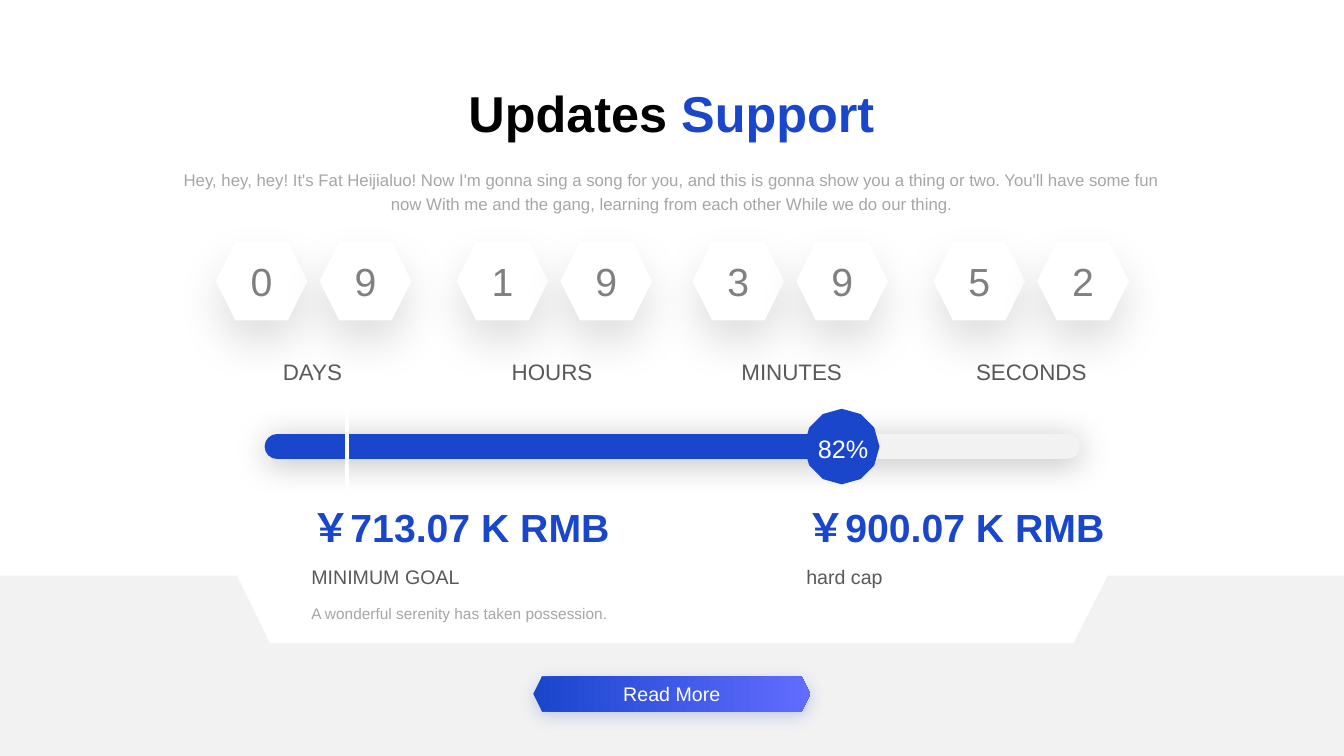
from dataclasses import dataclass
from typing import Optional

from lxml.etree import SubElement
from pptx import Presentation
from pptx.dml.color import RGBColor
from pptx.dml.fill import FillFormat
from pptx.enum.shapes import MSO_CONNECTOR as Link, MSO_SHAPE as Preset
from pptx.enum.text import MSO_ANCHOR as Anchor, MSO_AUTO_SIZE as AutoSize, PP_ALIGN as Align
from pptx.oxml.ns import qn
from pptx.shapes.autoshape import Shape
from pptx.shapes.connector import Connector
from pptx.text.text import _Paragraph as Paragraph
from pptx.util import Inches, Length, Pt

WHITE = RGBColor(0xFF, 0xFF, 0xFF)
BLACK = RGBColor(0x00, 0x00, 0x00)
PALE = RGBColor(0xF2, 0xF2, 0xF2)
SILVER = RGBColor(0xA6, 0xA6, 0xA6)
GREY = RGBColor(0x80, 0x80, 0x80)
SLATE = RGBColor(0x59, 0x59, 0x59)
BLUE = RGBColor(0x1A, 0x46, 0xCC)
VIOLET = RGBColor(0x62, 0x6C, 0xFF)

# The slide is a grid of square cells, ten to the inch.
COLUMNS, ROWS = 133.33, 75


def cells(count: float) -> Length:
    return Inches(count / 10)


@dataclass(frozen=True)
class Box:
    column: float
    row: float
    columns: float
    rows: float

    def lengths(self) -> list[Length]:
        return [cells(n) for n in (self.column, self.row, self.columns, self.rows)]


@dataclass(frozen=True)
class Style:
    """A run's look; with an angle, the text fades from blue to violet."""
    size: int
    color: RGBColor = BLUE
    bold: bool = False
    angle: Optional[int] = None


@dataclass(frozen=True)
class Shadow:
    color: RGBColor
    opacity: int
    blur: int
    distance: int


@dataclass(frozen=True)
class Countdown:
    digits: str
    unit: str
    column: float


@dataclass(frozen=True)
class Goal:
    amount: str
    name: str
    column: float
    amount_columns: float
    name_columns: float
    note: str = ""


TITLE = Style(36, BLACK, bold=True)
TITLE_ACCENT = Style(36, bold=True, angle=315)
INTRO = Style(12, SILVER)
DIGIT = Style(28, GREY)
UNIT = Style(16, SLATE)
AMOUNT = Style(28, bold=True, angle=0)
GOAL_NAME = Style(14, SLATE)
NOTE = Style(11, SILVER)
PERCENT = Style(18, WHITE)
BUTTON = Style(14, WHITE)

TRACK_SHADOW = Shadow(BLACK, 25, 24, 3)
DIGIT_SHADOW = Shadow(BLACK, 13, 32, 15)
BUTTON_SHADOW = Shadow(BLUE, 22, 12, 3)

COUNTDOWNS = [
    Countdown("09", "DAYS", 21.4),
    Countdown("19", "HOURS", 45.3),
    Countdown("39", "MINUTES", 68.7),
    Countdown("52", "SECONDS", 92.6),
]
DIGIT_STEP = 10.3
UNIT_LEFT, UNIT_STEP = 20.6, 23.77
GOALS = [
    Goal("￥713.07 K RMB", "MINIMUM GOAL", 29.9, 38.8, 20.8,
         "A wonderful serenity has taken possession."),
    Goal("￥900.07 K RMB", "hard cap", 79, 36.4, 24.2),
]
BAR_LEFT, BAR_RIGHT, BAR_REACHED, BAR_ROW = 27.5, 105.9, 83.5, 44.3
FLOOR_TOP, NOTCH_ROW = 57.1, 63.8
INTRO_TEXT = (
    "Hey, hey, hey! It's Fat Heijialuo! Now I'm gonna sing a song for you, and this is gonna "
    "show you a thing or two. You'll have some fun now With me and the gang, learning from "
    "each other While we do our thing."
)


def fade(fill: FillFormat, angle: int) -> None:
    fill.gradient()
    fill.gradient_angle = angle
    for stop, color in zip(fill.gradient_stops, (BLUE, VIOLET)):
        stop.color.rgb = color


def add_run(paragraph: Paragraph, text: str, style: Style) -> None:
    run = paragraph.add_run()
    run.text = text
    font = run.font
    font.name, font.size, font.bold = "Arial", Pt(style.size), style.bold
    if style.angle is None:
        font.color.rgb = style.color
    else:
        fade(font.fill, style.angle)


def add_text(shapes, box: Box, runs: list[tuple[str, Style]], align: Align = Align.CENTER,
             spacing: float = 1.0, wrap: bool = True) -> None:
    frame = shapes.add_textbox(*box.lengths()).text_frame
    frame.word_wrap = wrap
    frame.auto_size = AutoSize.SHAPE_TO_FIT_TEXT
    paragraph = frame.paragraphs[0]
    paragraph.alignment = align
    paragraph.line_spacing = spacing
    for text, style in runs:
        add_run(paragraph, text, style)


def cast_shadow(effects, shadow: Shadow) -> None:
    outer = SubElement(effects, qn("a:outerShdw"), blurRad=str(Pt(shadow.blur)),
                       dist=str(Pt(shadow.distance)), dir="5400000", algn="t", rotWithShape="0")
    color = SubElement(outer, qn("a:srgbClr"), val=str(shadow.color))
    SubElement(color, qn("a:alpha"), val=str(shadow.opacity * 1000))


def add_hexagon(shapes, box: Box, text: str, style: Style, shadow: Shadow) -> Shape:
    hexagon = shapes.add_shape(Preset.HEXAGON, *box.lengths())
    hexagon.line.fill.background()
    hexagon.shadow.inherit = False
    cast_shadow(hexagon.element.spPr.find(qn("a:effectLst")), shadow)
    frame = hexagon.text_frame
    frame.vertical_anchor = Anchor.MIDDLE
    frame.paragraphs[0].alignment = Align.CENTER
    add_run(frame.paragraphs[0], text, style)
    return hexagon


def add_line(shapes, start: tuple[float, float], end: tuple[float, float], color: RGBColor,
             width: int, shadow: Optional[Shadow] = None) -> Connector:
    line = shapes.add_connector(Link.STRAIGHT, *map(cells, start + end))
    line.line.color.rgb = color
    line.line.width = Pt(width)
    effects = SubElement(line.element.spPr, qn("a:effectLst"))
    if shadow:
        cast_shadow(effects, shadow)
    return line


def add_bar(shapes, right: float, color: RGBColor, shadow: Optional[Shadow] = None) -> Connector:
    bar = add_line(shapes, (BAR_LEFT, BAR_ROW), (right, BAR_ROW), color, 18, shadow)
    bar.element.spPr.find(qn("a:ln")).set("cap", "rnd")
    return bar


def add_floor(shapes) -> None:
    """Grey lower band with a notch in its top edge."""
    corners = [(23.5, FLOOR_TOP), (26.8, NOTCH_ROW), (106.5, NOTCH_ROW), (109.9, FLOOR_TOP),
               (COLUMNS, FLOOR_TOP), (COLUMNS, ROWS), (0, ROWS)]
    builder = shapes.build_freeform(cells(0), cells(FLOOR_TOP))
    builder.add_line_segments([(cells(x), cells(y)) for x, y in corners], close=True)
    floor = builder.convert_to_shape()
    floor.fill.solid()
    floor.fill.fore_color.rgb = PALE
    floor.line.fill.background()
    floor.shadow.inherit = False


def add_goal(shapes, goal: Goal) -> None:
    group = shapes.add_group_shape().shapes
    add_text(group, Box(goal.column, 55.6, goal.name_columns, 3.4),
             [(goal.name, GOAL_NAME)], Align.LEFT)
    if goal.note:
        add_text(group, Box(goal.column, 59.1, 36.7, 3), [(goal.note, NOTE)], Align.LEFT, 1.2)
    add_text(group, Box(goal.column, 49.4, goal.amount_columns, 5.7),
             [(goal.amount, AMOUNT)], Align.LEFT)


def add_progress(shapes) -> None:
    group = shapes.add_group_shape().shapes
    reached = add_bar(group, BAR_REACHED, BLUE)
    SubElement(reached.element.spPr.find(qn("a:ln")), qn("a:tailEnd"), type="oval")
    add_text(group, Box(80.1, 42.5, 7.1, 4), [("82%", PERCENT)], wrap=False)


def main() -> None:
    deck = Presentation()
    deck.slide_width, deck.slide_height = cells(COLUMNS), cells(ROWS)
    shapes = deck.slides.add_slide(deck.slide_layouts[6]).shapes

    add_bar(shapes, BAR_RIGHT, PALE, TRACK_SHADOW)
    for countdown in COUNTDOWNS:
        for place, digit in enumerate(countdown.digits):
            box = Box(countdown.column + place * DIGIT_STEP, 24, 9.1, 7.8)
            tile = add_hexagon(shapes, box, digit, DIGIT, DIGIT_SHADOW)
            tile.fill.solid()
            tile.fill.fore_color.rgb = WHITE
    add_floor(shapes)
    for index, countdown in enumerate(COUNTDOWNS):
        add_text(shapes, Box(UNIT_LEFT + index * UNIT_STEP, 35, 20.8, 3.7),
                 [(countdown.unit, UNIT)])
    for goal in GOALS:
        add_goal(shapes, goal)
    add_progress(shapes)
    add_text(shapes, Box(19.2, 7.7, 94.8, 7.1),
             [("Updates ", TITLE), ("Support", TITLE_ACCENT)])
    add_text(shapes, Box(16.7, 15.9, 99.9, 5.6), [(INTRO_TEXT, INTRO)], spacing=1.2)
    button = add_hexagon(shapes, Box(52.9, 67.1, 27.5, 3.5), "Read More", BUTTON, BUTTON_SHADOW)
    fade(button.fill, 0)
    add_line(shapes, (34.4, 40.3), (34.4, 48.6), WHITE, 3)
    deck.save("out.pptx")


if __name__ == "__main__":
    main()
